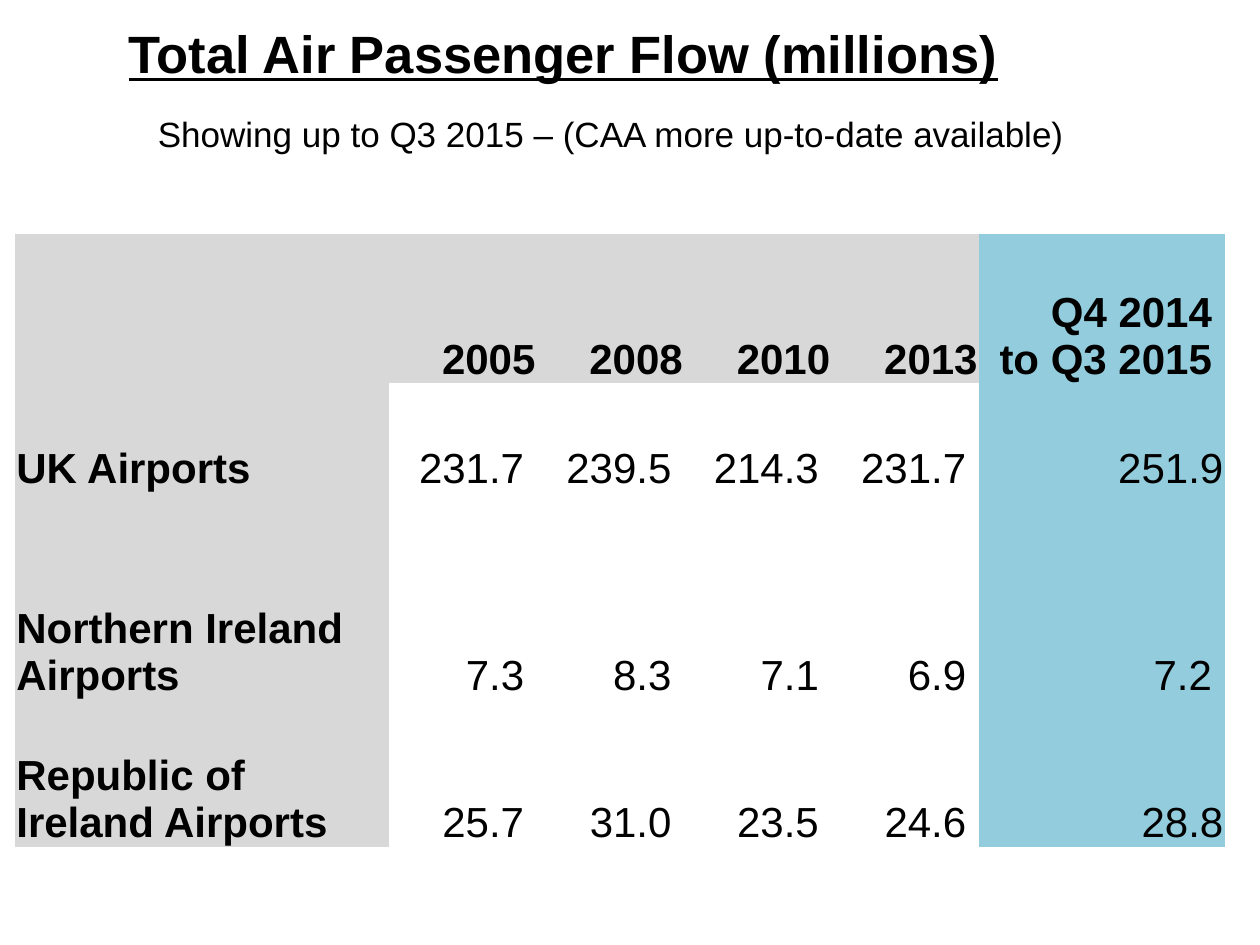
from dataclasses import dataclass

from pptx import Presentation
from pptx.dml.color import RGBColor
from pptx.enum.text import MSO_ANCHOR, MSO_AUTO_SIZE, PP_ALIGN
from pptx.util import Inches, Pt

LEFT, CENTER, RIGHT = PP_ALIGN.LEFT, PP_ALIGN.CENTER, PP_ALIGN.RIGHT
BOTTOM, MIDDLE, TOP = MSO_ANCHOR.BOTTOM, MSO_ANCHOR.MIDDLE, MSO_ANCHOR.TOP
FIXED = MSO_AUTO_SIZE.NONE


@dataclass(frozen=True)
class Theme:
    font: str = "Arial"
    ink: str = "000000"
    grey: str = "D8D8D8"
    blue: str = "93CDDD"
    title: int = 30
    note: int = 20
    cell: int = 24
    edge: float = 0.01
    gap: float = 0.1


@dataclass(frozen=True)
class Box:
    left: float
    top: float
    width: float
    height: float

    def lengths(self) -> list:
        return [Inches(n) for n in (self.left, self.top, self.width, self.height)]


@dataclass(frozen=True)
class Row:
    height: float
    label: str
    values: tuple
    flush: tuple = ()


THEME = Theme()
WIDTHS = (2.97, *[1.17] * 4, 1.95)
LAST = len(WIDTHS) - 1
ROWS = (
    Row(1.18, "", ("2005", "2008", "2010", "2013", "Q4 2014\nto Q3 2015"), (1, 2, 3, 4)),
    Row(0.87, "UK Airports", ("231.7", "239.5", "214.3", "231.7", "251.9"), (LAST,)),
    Row(1.64, "Northern Ireland Airports", ("7.3", "8.3", "7.1", "6.9", "7.2")),
    Row(1.17, "Republic of Ireland Airports", ("25.7", "31.0", "23.5", "24.6", "28.8"), (LAST,)),
)
PLAIN = "{2D5ABB26-0587-4C30-8999-92F81FD0307C}"


def write(frame, text: str, size: int, align, **style) -> None:
    frame.text = text
    look = {"name": THEME.font, "size": Pt(size), **style}
    for para in frame.paragraphs:
        para.alignment = align
        for run in para.runs:
            for key, value in look.items():
                setattr(run.font, key, value)
            run.font.color.rgb = RGBColor.from_string(THEME.ink)


def place(holder, box: Box, anchor, text: str, size: int, **style) -> None:
    holder.left, holder.top, holder.width, holder.height = box.lengths()
    frame = holder.text_frame
    frame.auto_size = FIXED
    frame.vertical_anchor = anchor
    write(frame, text, size, CENTER, **style)


def tint(cell, row: int, col: int) -> None:
    if 0 < row and 0 < col < LAST:
        cell.fill.background()
        return
    cell.fill.solid()
    cell.fill.fore_color.rgb = RGBColor.from_string(THEME.blue if col == LAST else THEME.grey)


def draw(slide, box: Box) -> None:
    table = slide.shapes.add_table(len(ROWS), len(WIDTHS), *box.lengths()).table
    table.first_row = table.horz_banding = False
    table._tbl.tblPr.find("{*}tableStyleId").text = PLAIN
    for col, width in zip(table.columns, WIDTHS):
        col.width = Inches(width)
    for r, row in enumerate(ROWS):
        table.rows[r].height = Inches(row.height)
        for c, text in enumerate((row.label, *row.values)):
            cell = table.cell(r, c)
            tint(cell, r, c)
            cell.vertical_anchor = BOTTOM
            tight = c == 0 or c in row.flush
            cell.margin_left = cell.margin_top = Inches(THEME.edge)
            cell.margin_right = Inches(THEME.edge if tight else THEME.gap)
            cell.margin_bottom = 0
            write(cell.text_frame, text, THEME.cell, RIGHT if c else LEFT, bold=r == 0 or c == 0)


def main() -> None:
    deck = Presentation()
    deck.slide_width, deck.slide_height = Inches(10), Inches(7.5)
    slide = deck.slides.add_slide(deck.slide_layouts[1])
    place(slide.shapes.title, Box(0, 0, 8.94, 0.84), MIDDLE,
          "Total Air Passenger Flow (millions)", THEME.title, bold=True, underline=True)
    body = slide.placeholders[1]
    place(body, Box(0.35, 0.84, 9, 0.63), TOP,
          "Showing up to Q3 2015 – (CAA more up-to-date available)", THEME.note)
    props = body.text_frame.paragraphs[0]._p.get_or_add_pPr()
    for key in ("marL", "indent"):
        props.set(key, "0")
    props.insert_element_before(props.makeelement(
        props.tag.replace("pPr", "buNone"), {}), "a:tabLst", "a:defRPr", "a:extLst")
    draw(slide, Box(0.12, 1.86, sum(WIDTHS), sum(row.height for row in ROWS)))
    deck.save("out.pptx")


if __name__ == "__main__":
    main()
